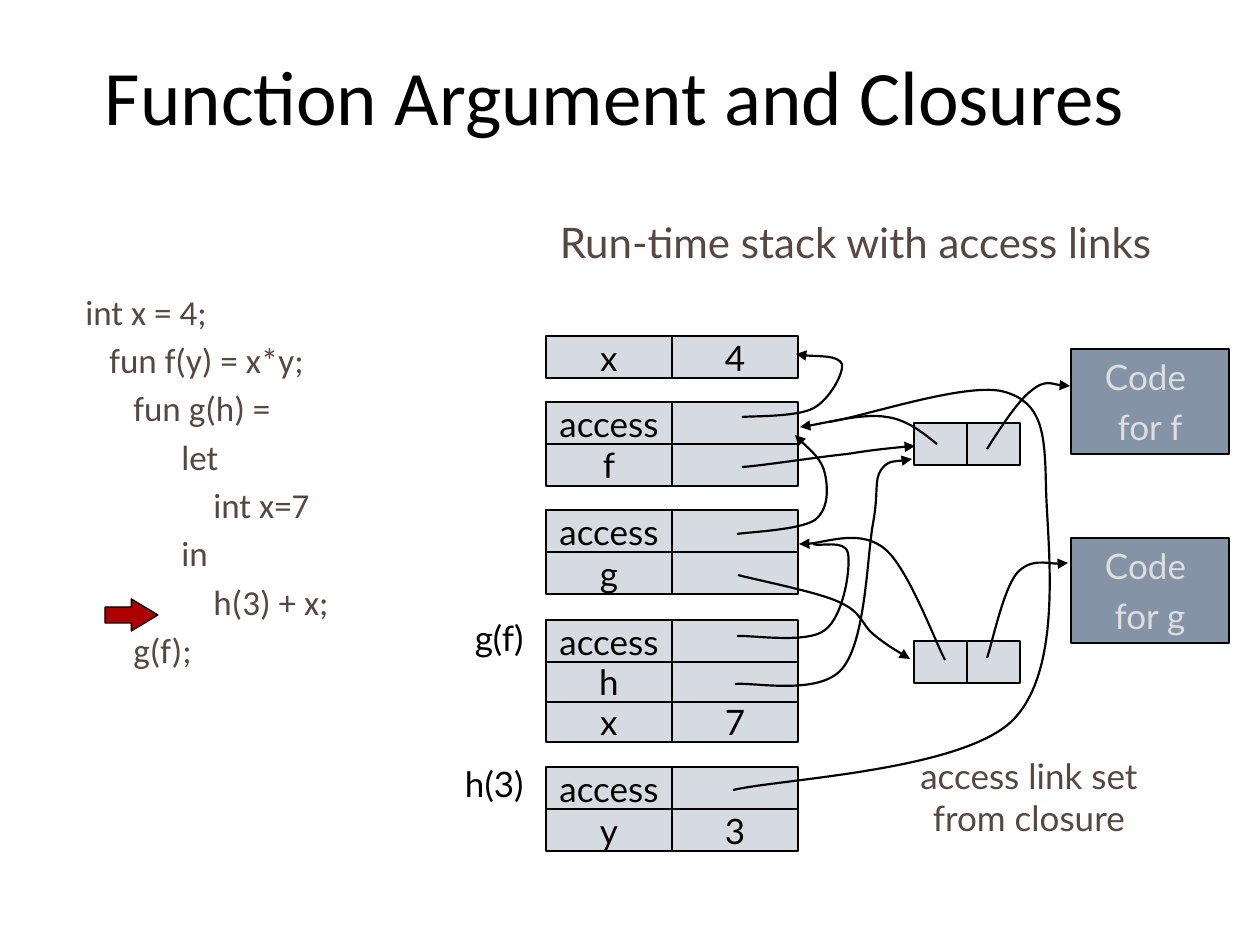
from lxml import etree
from pptx import Presentation
from pptx.dml.color import RGBColor
from pptx.enum.shapes import MSO_SHAPE
from pptx.enum.text import MSO_ANCHOR, PP_ALIGN
from pptx.oxml.ns import qn
from pptx.util import Emu, Pt

SCALE = 914400 / 126
BLACK = RGBColor(0x00, 0x00, 0x00)
BROWN = RGBColor(0x56, 0x48, 0x41)
PALE = RGBColor(0xD6, 0xDB, 0xE1)
SLATE = RGBColor(0x84, 0x94, 0xA6)
LIGHT = RGBColor(0xDE, 0xDE, 0xE0)
RED = RGBColor(0xAD, 0x01, 0x01)

LEFT, CELL, ROW, HALF = 546, 126, 42, 53

# Code lines with their indents in steps
CODE = [
    ("int x = 4;", 0),
    ("fun f(y) = x*y;", 3),
    ("fun g(h) =", 6),
    ("let", 12),
    ("int x=7", 16),
    ("in", 12),
    ("h(3) + x;", 16),
    ("g(f);", 6),
]
STEP, BASE = 8, 63

# Stack frames: top, row pitch, rows of name and value
STACK = [
    (336, ROW, [("x", "4")]),
    (402, ROW, [("access", ""), ("f", "")]),
    (510, ROW, [("access", ""), ("g", "")]),
    (620, 40, [("access", ""), ("h", ""), ("x", "7")]),
    (767, ROW, [("access", ""), ("y", "3")]),
]

# Links: start, then two control points and an end for each curve
HEADED = [
    # closure of f: code and scope
    [(987, 449), (994, 438), (1017, 401), (1031, 391),
     (1045, 379), (1062, 387), (1070, 386)],
    [(937, 444), (929, 438), (910, 420), (887, 417),
     (864, 413), (818, 425), (800, 427)],
    # closure of g: code and scope
    [(987, 658), (992, 644), (1003, 590), (1017, 573),
     (1031, 558), (1058, 566), (1068, 563)],
    [(945, 660), (935, 641), (908, 568), (885, 549),
     (861, 529), (816, 546), (799, 544)],
    # frame of f: access and value
    [(742, 417), (755, 416), (798, 417), (814, 408), (830, 399),
     (844, 373), (842, 364), (838, 355), (805, 357), (796, 354)],
    [(742, 467), (760, 466), (818, 457), (847, 454),
     (872, 450), (900, 447), (915, 446)],
    # frame of g: access and value
    [(737, 534), (750, 532), (800, 530), (815, 520), (829, 509),
     (828, 488), (825, 474), (822, 459), (801, 442), (795, 435)],
    [(738, 575), (756, 580), (818, 592), (839, 602), (862, 612),
     (862, 625), (873, 634), (885, 644), (902, 654), (910, 659)],
    # frame of g(f): value of h
    [(735, 684), (753, 682), (819, 696), (842, 669), (866, 641),
     (867, 557), (873, 524), (879, 491), (874, 481), (881, 470),
     (888, 460), (906, 461), (912, 459)],
]
# Access links that join the heads of other links
PLAIN = [
    [(737, 636), (751, 635), (808, 644), (825, 630), (844, 616),
     (851, 567), (848, 553), (845, 539), (820, 547), (813, 544)],
    [(733, 790), (780, 779), (960, 771), (1012, 721), (1065, 669),
     (1047, 542), (1046, 486), (1045, 432), (1042, 403), (1005, 392),
     (969, 381), (866, 416), (829, 422)],
]


def px(num):
    return Emu(round(num * SCALE))


def write(frame, lines, color, size=20, face="Lato",
          align=PP_ALIGN.CENTER, gap=4.8):
    """Fill a text frame, one paragraph a line."""
    for num, line in enumerate(lines):
        para = frame.add_paragraph() if num else frame.paragraphs[0]
        para.text = line
        para.alignment = align
        para.space_before = Pt(gap if num else 0)
        font = para.font
        font.name, font.size = face, Pt(size)
        font.color.rgb = color


def indent(para, dist):
    props = para._p.get_or_add_pPr()
    props.set("marL", str(px(dist)))
    props.set("indent", "0")


def add_text(slide, area, lines, color, **style):
    box = slide.shapes.add_textbox(*map(px, area))
    frame = box.text_frame
    frame.word_wrap = True
    write(frame, lines, color, **style)
    return frame


def add_box(slide, area, fill, lines=(), color=BLACK, kind=MSO_SHAPE.RECTANGLE):
    box = slide.shapes.add_shape(kind, *map(px, area))
    box.shadow.inherit = False
    box.fill.solid()
    box.fill.fore_color.rgb = fill
    box.line.color.rgb = BLACK
    box.line.width = Pt(0.75)
    frame = box.text_frame
    frame.word_wrap = False
    frame.vertical_anchor = MSO_ANCHOR.MIDDLE
    write(frame, lines, color)
    return box


def add_frame(slide, top, pitch, rows):
    """Draw one stack frame, from the last row up."""
    for num, row in reversed(list(enumerate(rows))):
        for col, text in enumerate(row):
            area = (LEFT + col * CELL, top + num * pitch, CELL, ROW)
            add_box(slide, area, PALE, [text] if text else [])


def add_link(slide, points, head):
    """Draw a curved line through sets of control points."""
    build = slide.shapes.build_freeform(*points[0], scale=SCALE)
    build.add_line_segments(points[1:], close=False)
    link = build.convert_to_shape()
    link.shadow.inherit = False
    link.fill.background()
    link.line.color.rgb = BLACK
    link.line.width = Pt(1.25)
    # Join each three line steps into one Bézier curve
    steps = list(link._element.iter(qn("a:lnTo")))
    trace = steps[0].getparent()
    for num in range(0, len(steps), 3):
        curve = etree.SubElement(trace, qn("a:cubicBezTo"))
        for step in steps[num:num + 3]:
            curve.append(step[0])
            trace.remove(step)
    if head:
        line = link.line._get_or_add_ln()
        etree.SubElement(line, qn("a:tailEnd"), type="triangle")


def main():
    deck = Presentation()
    deck.slide_width, deck.slide_height = px(1260), px(945)
    slide = deck.slides.add_slide(deck.slide_layouts[5])

    # Title and heading
    title = slide.shapes.title
    title.left, title.top, title.width, title.height = map(
        px, (55, 32, 1120, 126))
    title.text_frame.vertical_anchor = MSO_ANCHOR.MIDDLE
    write(title.text_frame, ["Function Argument and Closures"], BLACK,
          size=44, face="Calibri")
    head = add_text(slide, (451, 210, 746, 84),
                    ["Run-time stack with access links"], BROWN, size=24)
    indent(head.paragraphs[0], BASE)

    # Program with its current line
    code = add_text(slide, (10, 284, 431, 536), [line for line, _ in CODE],
                    BROWN, face="Calibri", align=PP_ALIGN.LEFT, gap=3.6)
    for para, (_, depth) in zip(code.paragraphs, CODE):
        indent(para, BASE + depth * STEP)
    mark = add_box(slide, (105, 599, 53, 32), RED, kind=MSO_SHAPE.RIGHT_ARROW)
    mark.adjustments[1] = 0.83

    # Run-time stack
    for top, pitch, rows in STACK:
        add_frame(slide, top, pitch, rows)
    for text, top in (("g(f)", 610), ("h(3)", 756)):
        add_text(slide, (357, top, 179, 54), [text], BLACK,
                 align=PP_ALIGN.RIGHT)

    # Closures and their code
    for name, top, pair in (("f", 349, 423), ("g", 538, 641)):
        add_box(slide, (1071, top, 158, 105), SLATE,
                ["Code ", f"for {name}"], LIGHT)
        for col in range(2):
            add_box(slide, (914 + col * HALF, pair, HALF, ROW), PALE)
    add_text(slide, (903, 748, 252, 97),
             ["access link set from closure"], BROWN)

    # Links
    for links, tip in ((HEADED, True), (PLAIN, False)):
        for points in links:
            add_link(slide, points, tip)

    deck.save("out.pptx")


if __name__ == "__main__":
    main()
